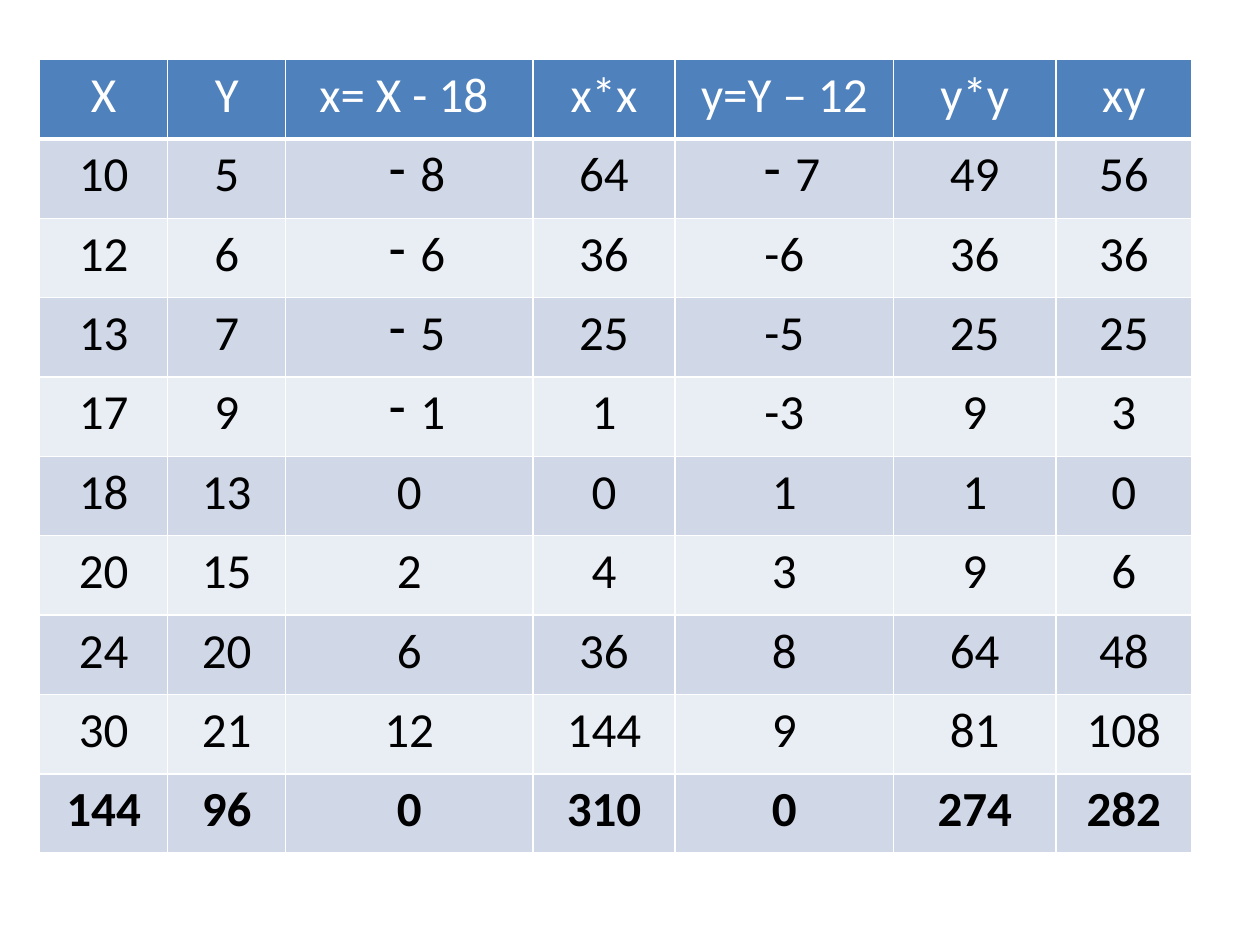
from lxml.etree import SubElement
from pptx import Presentation
from pptx.dml.color import RGBColor
from pptx.enum.text import PP_ALIGN
from pptx.oxml.ns import qn
from pptx.util import Cm, Pt

COLUMN_WIDTHS = [2.58, 2.38, 4.98, 2.87, 4.4, 3.28, 2.73]
ROW_HEIGHT = 1.6
HEADER = ["X", "Y", "x= X - 18 ", "x*x", "y=Y – 12", "y*y", "xy"]
ROWS = [
    ["10", "5", "- 8", "64", "- 7", "49", "56"],
    ["12", "6", "- 6", "36", "-6", "36", "36"],
    ["13", "7", "- 5", "25", "-5", "25", "25"],
    ["17", "9", "- 1", "1", "-3", "9", "3"],
    ["18", "13", "0", "0", "1", "1", "0"],
    ["20", "15", "2", "4", "3", "9", "6"],
    ["24", "20", "6", "36", "8", "64", "48"],
    ["30", "21", "12", "144", "9", "81", "108"],
]
TOTALS = ["144", "96", "0", "310", "0", "274", "282"]
DASH = "- "


def color(value):
    return RGBColor.from_string(value)


def add_dash_bullet(paragraph):
    properties = paragraph._p.get_or_add_pPr()
    properties.set("marL", str(Cm(0.95)))
    properties.set("indent", str(-Cm(0.63)))
    SubElement(properties, qn("a:buFontTx"))
    SubElement(properties, qn("a:buChar"), char="-")


def set_borders(cell, bottom_width):
    properties = cell._tc.get_or_add_tcPr()
    widths = {"a:lnL": 1, "a:lnR": 1, "a:lnT": 1, "a:lnB": bottom_width}
    for position, (tag, width) in enumerate(widths.items()):
        line = SubElement(properties, qn(tag), w=str(Pt(width)))
        fill = SubElement(line, qn("a:solidFill"))
        SubElement(fill, qn("a:srgbClr"), val="FFFFFF")
        properties.insert(position, line)


def fill_cell(cell, text, fill, font_color, bold, bottom_width):
    cell.fill.solid()
    cell.fill.fore_color.rgb = color(fill)
    set_borders(cell, bottom_width)
    paragraph = cell.text_frame.paragraphs[0]
    paragraph.alignment = PP_ALIGN.CENTER
    if text.startswith(DASH):
        add_dash_bullet(paragraph)
    paragraph.text = text.removeprefix(DASH)
    font = paragraph.font
    font.name = "Calibri"
    font.size = Pt(28)
    font.bold = bold
    font.color.rgb = color(font_color)


def add_deviation_table(slide):
    rows = [HEADER, *ROWS, TOTALS]
    table = slide.shapes.add_table(
        len(rows), len(COLUMN_WIDTHS), Cm(0.8), Cm(1.2),
        Cm(sum(COLUMN_WIDTHS)), Cm(ROW_HEIGHT * len(rows)),
    ).table
    for column, width in zip(table.columns, COLUMN_WIDTHS):
        column.width = Cm(width)
    for row_index, texts in enumerate(rows):
        is_header = row_index == 0
        band = "D0D8E8" if row_index % 2 else "E9EDF4"
        for column_index, text in enumerate(texts):
            fill_cell(
                table.cell(row_index, column_index), text,
                fill="4F81BD" if is_header else band,
                font_color="FFFFFF" if is_header else "000000",
                bold=texts is TOTALS,
                bottom_width=3 if is_header else 1,
            )


def main():
    presentation = Presentation()
    presentation.slide_width = Cm(25.4)
    presentation.slide_height = Cm(19.05)
    slide = presentation.slides.add_slide(presentation.slide_layouts[6])
    add_deviation_table(slide)
    presentation.save("out.pptx")


if __name__ == "__main__":
    main()
